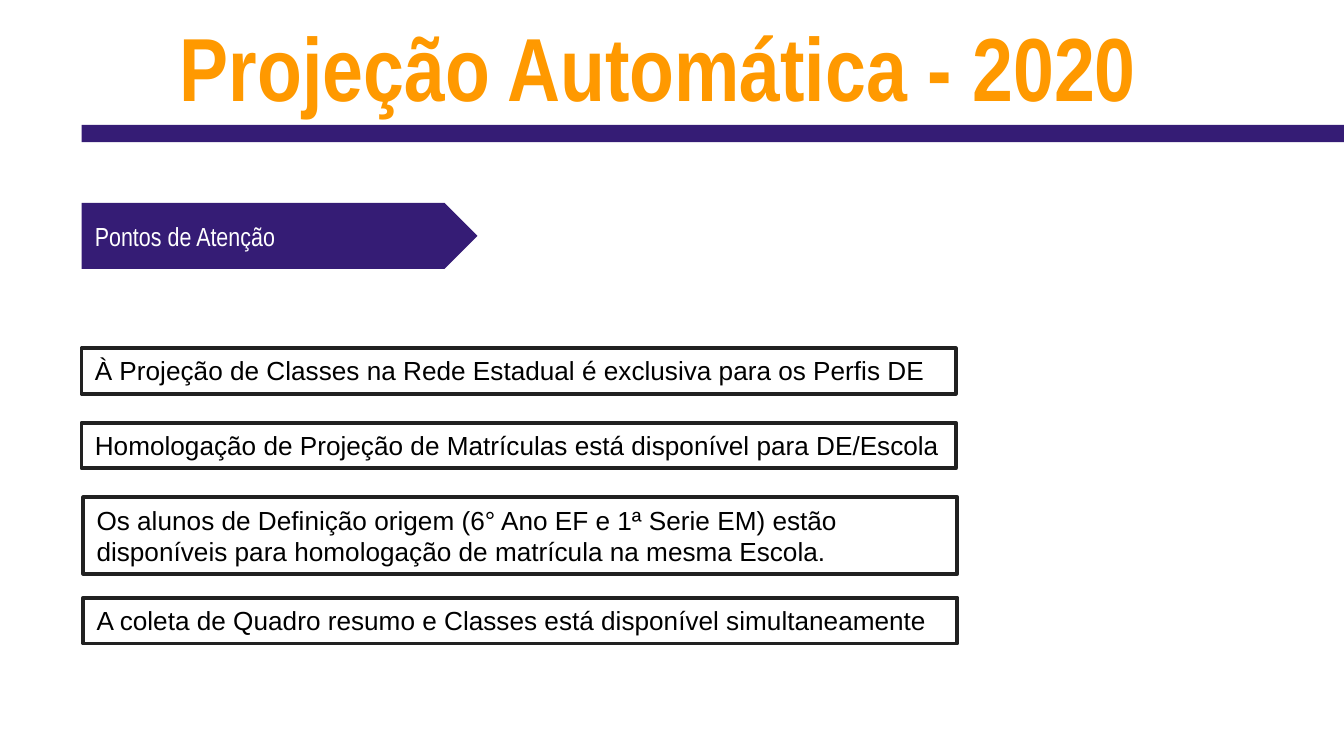
"""Build the slide on points of attention for the 2020 automatic projection."""
from pptx import Presentation
from pptx import util as u
from pptx.dml.color import RGBColor
from pptx.enum import shapes, text

COLORS = {"title": "FF9900", "purple": "351C75", "white": "FFFFFF",
          "border": "212121", "black": "000000"}
WIDTH = 10
HEIGHT = WIDTH * 9 / 16
COLUMN, ROW = 0.62, 0.37

TITLE = "Projeção Automática - 2020"
SECTION = "Pontos de Atenção"
POINTS = [
    (0.98, 7, 0.92, "À Projeção de Classes na Rede Estadual é exclusiva para os Perfis DE"),
    (0.98, 8.5, 0.92, "Homologação de Projeção de Matrículas está disponível para DE/Escola"),
    (1, 10, 1.54, "Os alunos de Definição origem (6° Ano EF e 1ª Serie EM) estão "
                  "disponíveis para homologação de matrícula na mesma Escola."),
    (1, 12.02, 0.92, "A coleta de Quadro resumo e Classes está disponível simultaneamente"),
]


def color(name):
    return RGBColor.from_string(COLORS[name])


def place(column, row, columns, rows):
    return [u.Inches(value) for value in
            (column * COLUMN, row * ROW, columns * COLUMN, rows * ROW)]


def add_block(slide, kind, area, fill, border=None):
    shape = slide.shapes.add_shape(kind, *place(*area))
    shape.shadow.inherit = False
    shape.fill.solid()
    shape.fill.fore_color.rgb = color(fill)
    if border:
        shape.line.color.rgb = color(border)
        shape.line.width = u.Pt(2)
    else:
        shape.line.fill.background()
    return shape


def write(shape, words, size, font, ink, bold=False, inset=0.1):
    frame = shape.text_frame
    frame.word_wrap = True
    frame.vertical_anchor = text.MSO_ANCHOR.MIDDLE
    frame.margin_left = frame.margin_right = u.Inches(0.1)
    frame.margin_top = frame.margin_bottom = u.Inches(inset)
    paragraph = frame.paragraphs[0]
    paragraph.text = words
    paragraph.alignment = text.PP_ALIGN.LEFT
    paragraph.font.size = u.Pt(size)
    paragraph.font.name = font
    paragraph.font.bold = bold
    paragraph.font.color.rgb = color(ink)


def main():
    presentation = Presentation()
    presentation.slide_width = u.Inches(WIDTH)
    presentation.slide_height = u.Inches(HEIGHT)
    slide = presentation.slides.add_slide(presentation.slide_layouts[6])
    kinds = shapes.MSO_SHAPE

    title = slide.shapes.add_textbox(*place(2, 0.62, 14.3, 1.4))
    write(title, TITLE, 48, "Arial Narrow", "title", bold=True)
    add_block(slide, kinds.RECTANGLE, (0.98, 2.51, WIDTH / COLUMN - 0.98, 0.35), "purple")

    for column, row, rows, words in POINTS:
        box = add_block(slide, kinds.RECTANGLE, (column, row, 10.49, rows), "white", "border")
        write(box, words, 14, "Arial", "black", inset=0.05)
        box.text_frame.vertical_anchor = text.MSO_ANCHOR.TOP
        box.text_frame.auto_size = text.MSO_AUTO_SIZE.SHAPE_TO_FIT_TEXT

    section = add_block(slide, kinds.PENTAGON, (0.98, 4.08, 4.75, 1.33), "purple")
    write(section, SECTION, 14, "Arial Narrow", "white")

    presentation.save("out.pptx")


if __name__ == "__main__":
    main()
